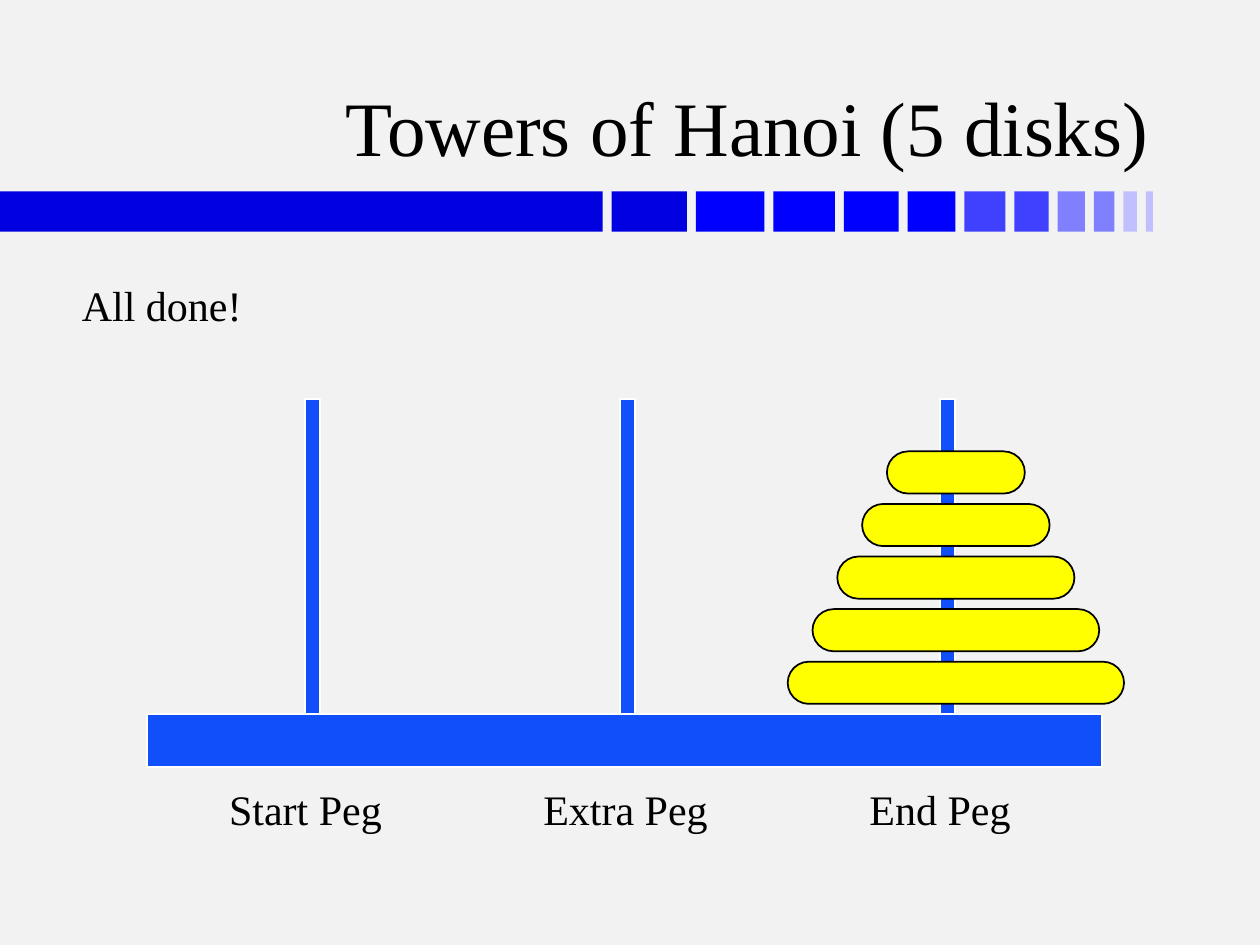
from pptx import Presentation
from pptx.dml.color import RGBColor
from pptx.enum.shapes import MSO_SHAPE as Shape
from pptx.enum.text import MSO_ANCHOR as Anchor, MSO_AUTO_SIZE as AutoSize, PP_ALIGN as Align
from pptx.util import Cm, Pt

FONT = "Times New Roman"
BLACK, WHITE, YELLOW, PEG_BLUE = "000000", "FFFFFF", "FFFF00", "114FFB"
# From the narrowest block at the right to the widest at the left
STRIPE_COLOURS = ["C0C0FF"] * 2 + ["8080FF"] * 2 + ["4040FF"] * 2 + ["0000FF"] * 4 + ["0000E0"]

# Label, label centre, label width, peg centre (cm)
PEGS = [
    ("Start Peg", 6.16, 3.58, 6.3),
    ("Extra Peg", 12.61, 3.84, 12.65),
    ("End Peg", 18.95, 3.35, 19.1),
]
PEG_WIDTH, PEG_TOP, BASE_TOP = 0.3, 8.05, 14.4
DISK_COUNT, DISK_CENTRE, DISK_HEIGHT = 5, 19.27, 0.85


def paint(fill, colour):
    fill.solid()
    fill.fore_color.rgb = RGBColor.from_string(colour)


def style_text(frame, text, size, align):
    frame.text = text
    paragraph = frame.paragraphs[0]
    paragraph.alignment = align
    paragraph.font.name = FONT
    paragraph.font.size = Pt(size)
    paragraph.font.color.rgb = RGBColor.from_string(BLACK)


def add_block(slide, left, top, width, height, colour, outline=None, kind=Shape.RECTANGLE):
    block = slide.shapes.add_shape(kind, Cm(left), Cm(top), Cm(width), Cm(height))
    block.shadow.inherit = False
    paint(block.fill, colour)
    if outline:
        paint(block.line.fill, outline)
        block.line.width = Pt(1)
    else:
        block.line.fill.background()
    return block


def add_label(slide, text, left, top, width, align):
    frame = slide.shapes.add_textbox(Cm(left), Cm(top), Cm(width), Cm(1.27)).text_frame
    frame.word_wrap = False
    frame.auto_size = AutoSize.SHAPE_TO_FIT_TEXT
    style_text(frame, text, 24, align)


def add_stripe(slide):
    """Draw the bar under the title, whose blocks narrow towards the right."""
    top, height, gap, width_step = 3.86, 0.81, 0.18, 0.138
    left = 23.24
    for number, colour in enumerate(STRIPE_COLOURS, start=1):
        width = number * width_step
        left -= width
        add_block(slide, left, top, width, height, colour)
        left -= gap
    add_block(slide, 0, top, left, height, STRIPE_COLOURS[-1])


def set_title(slide, text):
    title = slide.shapes.title
    title.left, title.top, title.width, title.height = Cm(1.88), Cm(0.48), Cm(21.54), Cm(3.12)
    title.text_frame.vertical_anchor = Anchor.BOTTOM
    style_text(title.text_frame, text, 44, Align.RIGHT)


def add_pegs(slide):
    add_block(slide, 2.97, BASE_TOP, 19.25, 1.06, PEG_BLUE, WHITE)
    for label, label_centre, label_width, peg_centre in PEGS:
        add_block(slide, peg_centre - PEG_WIDTH / 2, PEG_TOP, PEG_WIDTH,
                  BASE_TOP - PEG_TOP, PEG_BLUE, WHITE)
        add_label(slide, label, label_centre - label_width / 2, 15.67, label_width, Align.CENTER)


def add_disks(slide):
    """Stack the disks from the largest at the bottom upwards."""
    for level in range(DISK_COUNT):
        width = 6.78 - level
        disk = add_block(slide, DISK_CENTRE - width / 2, 13.34 - level * 1.06, width,
                         DISK_HEIGHT, YELLOW, BLACK, Shape.ROUNDED_RECTANGLE)
        disk.adjustments[0] = 0.5


def main():
    deck = Presentation()
    deck.slide_width, deck.slide_height = Cm(25.4), Cm(19.05)
    slide = deck.slides.add_slide(deck.slide_layouts[5])
    paint(slide.background.fill, "F2F2F2")
    add_stripe(slide)
    set_title(slide, "Towers of Hanoi (5 disks)")
    add_label(slide, "All done!", 1.4, 5.51, 3.73, Align.LEFT)
    add_pegs(slide)
    add_disks(slide)
    deck.save("out.pptx")


if __name__ == "__main__":
    main()
